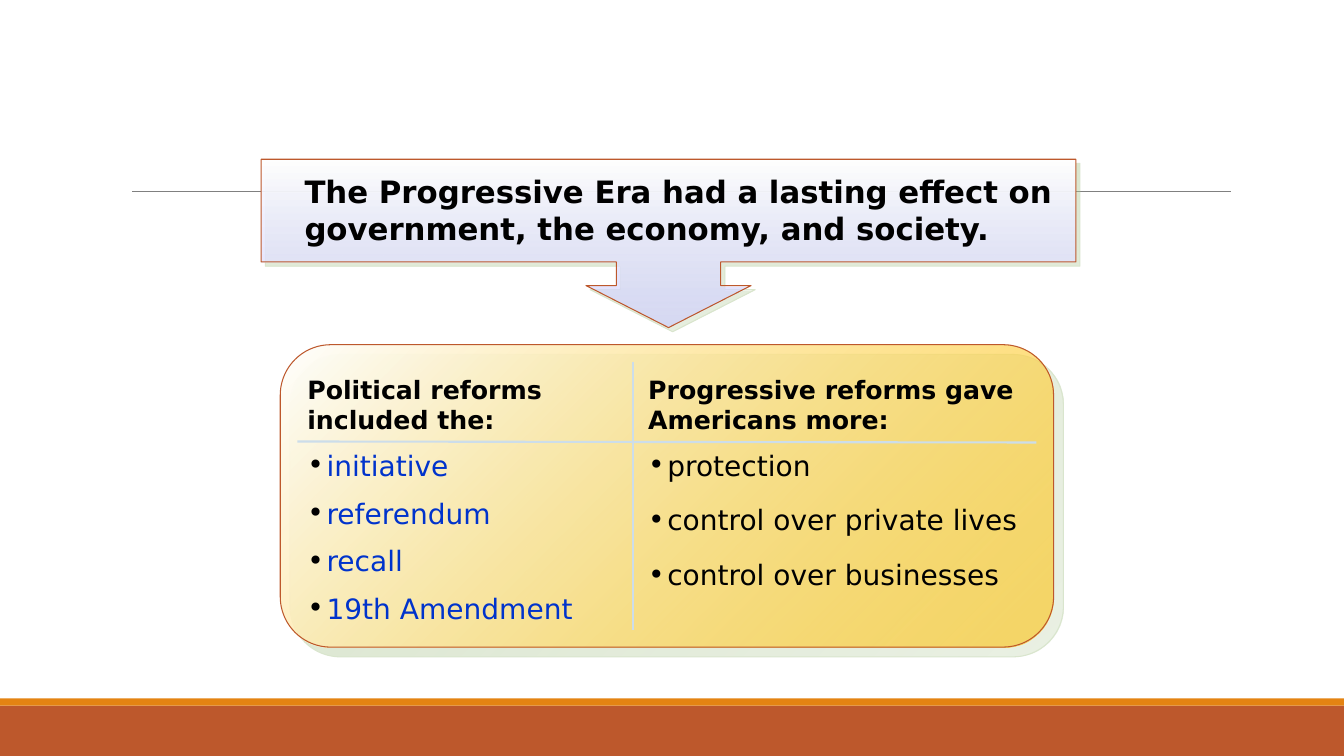
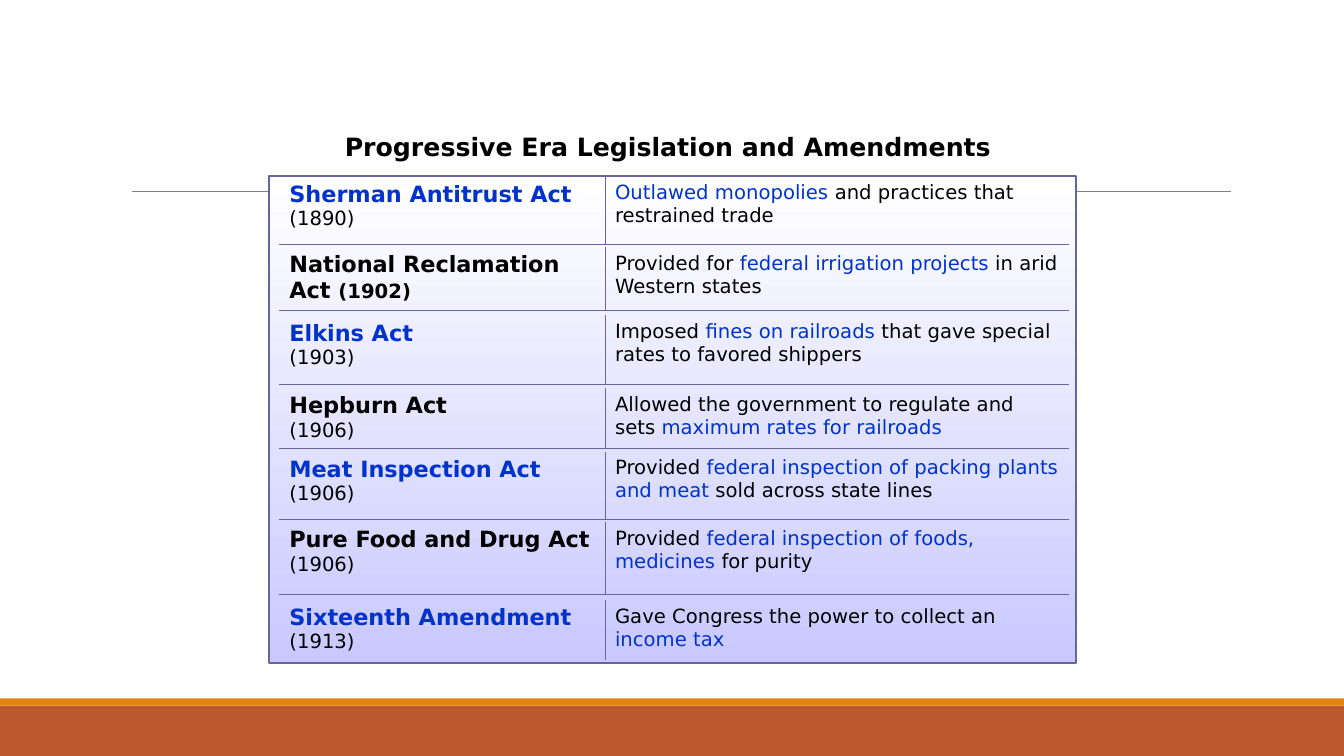
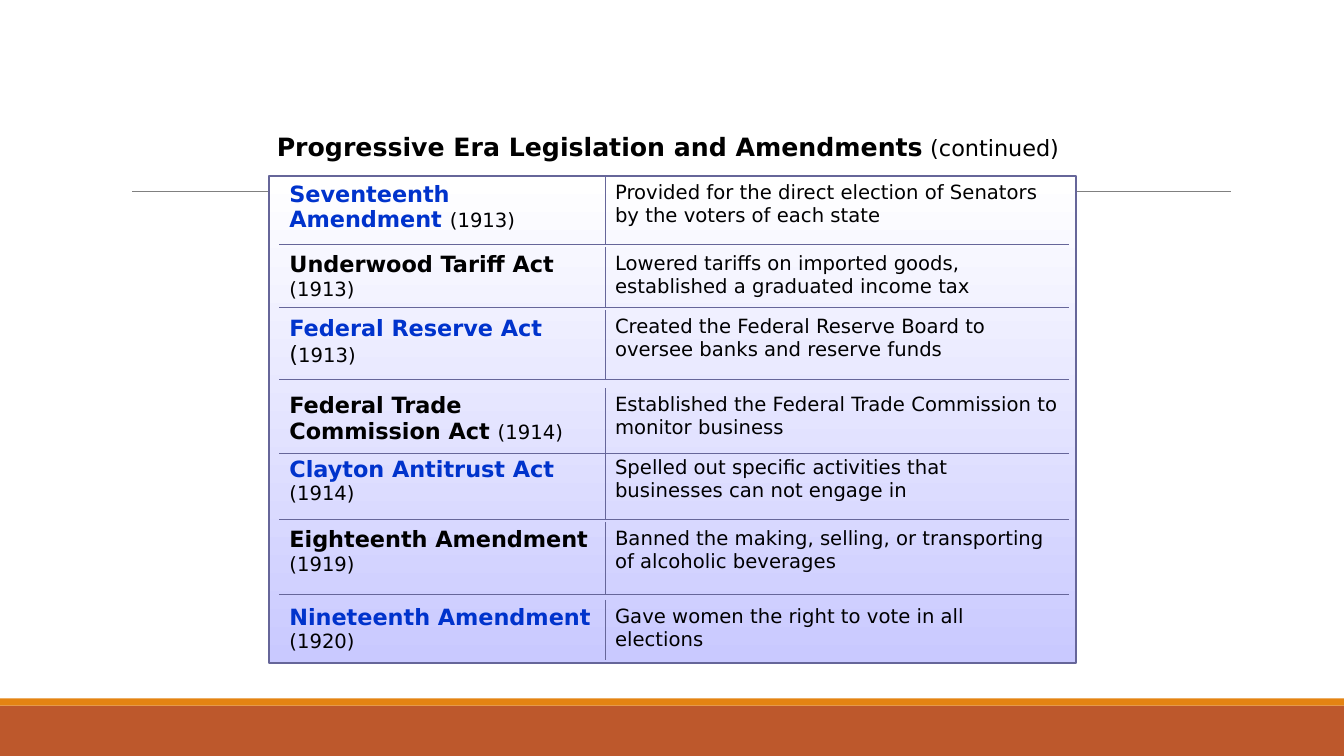
from dataclasses import dataclass

from lxml import etree
from pptx import Presentation
from pptx.dml.color import RGBColor
from pptx.enum import shapes, text
from pptx.oxml.ns import qn
from pptx.util import Inches, Pt

FONT = "DejaVu Sans"
WHITE = RGBColor(0xFF, 0xFF, 0xFF)
BLACK = RGBColor(0x00, 0x00, 0x00)
BLUE = RGBColor(0x00, 0x33, 0xCC)
GRAY = RGBColor(0x80, 0x80, 0x80)
RUST = RGBColor(0xBD, 0x58, 0x2C)
ORANGE = RGBColor(0xE4, 0x83, 0x12)
GOLD = RGBColor(0xFF, 0xC0, 0x00)
LILAC = RGBColor(0xCD, 0xCD, 0xFF)
LAVENDER = RGBColor(0xC9, 0xC9, 0xFF)
SLATE = RGBColor(0x66, 0x66, 0x99)
PALE_BLUE = RGBColor(0xCC, 0xDD, 0xEA)
SAGE = RGBColor(0xAD, 0xC7, 0x93)
PLAIN_TABLE = "{2D5ABB26-0587-4C30-8999-92F81FD0307C}"
SLIDE_WIDTH = 13.33
HEADING = "Progressive Era Legislation and Amendments"


@dataclass
class Act:
    top: float
    height: float
    name: str
    year: str
    effect: str
    year_bold: bool = False
    opening: str = ""


FIRST_ACTS = [
    Act(1.75, 0.67, "Sherman Antitrust Act ", "(1890)",
        "*Outlawed monopolies* and practices that restrained trade"),
    Act(2.45, 0.63, "National Reclamation Act ", "(1902)",
        "Provided for *federal irrigation projects* in arid Western states", year_bold=True),
    Act(3.13, 0.68, "Elkins Act\n", "(1903)",
        "Imposed *fines on railroads* that gave special rates to favored shippers"),
    Act(3.85, 0.6, "Hepburn Act\n", "(1906)",
        "Allowed the government to regulate and sets *maximum rates for railroads*"),
    Act(4.48, 0.67, "Meat Inspection Act ", "(1906)",
        "Provided *federal inspection of packing plants and meat* sold across state lines"),
    Act(5.18, 0.72, "Pure Food and Drug Act ", "(1906)",
        "Provided *federal inspection of foods, medicines* for purity"),
    Act(5.95, 0.6, "Sixteenth Amendment ", "(1913)",
        "Gave Congress the power to collect an *income tax*"),
]
LATER_ACTS = [
    Act(1.75, 0.67, "Seventeenth Amendment ", "(1913)",
        "Provided for the direct election of Senators by the voters of each state"),
    Act(2.45, 0.6, "Underwood Tariff Act\n", "(1913)",
        "Lowered tariffs on imported goods, established a graduated income tax"),
    Act(3.08, 0.68, "Federal Reserve Act\n", "1913)",
        "Created the Federal Reserve Board to oversee banks and reserve funds", opening="("),
    Act(3.85, 0.65, "Federal Trade Commission Act ", "(1914)",
        "Established the Federal Trade Commission to monitor business"),
    Act(4.48, 0.67, "Clayton Antitrust Act\n", "(1914)",
        "Spelled out specific activities that businesses can not engage in"),
    Act(5.18, 0.72, "Eighteenth Amendment ", "(1919)",
        "Banned the making, selling, or transporting of alcoholic beverages"),
    Act(5.95, 0.6, "Nineteenth Amendment ", "(1920)",
        "Gave women the right to vote in all elections"),
]


def style(font, size, color=BLACK, bold=False):
    font.name = FONT
    font.size = Pt(size)
    font.bold = bold
    font.color.rgb = color


def add_run(paragraph, words, size, color=BLACK, bold=False):
    run = paragraph.add_run()
    run.text = words
    style(run.font, size, color, bold)


def add_line(slide, start, end, color, width):
    rule = slide.shapes.add_connector(
        shapes.MSO_CONNECTOR.STRAIGHT, *(Inches(n) for n in start + end))
    rule.line.color.rgb = color
    rule.line.width = Pt(width)
    etree.SubElement(rule.element.spPr, qn("a:effectLst"))


def add_box(slide, preset, box, line_color=None, line_width=0.75):
    shape = slide.shapes.add_shape(preset, *(Inches(n) for n in box))
    shape.shadow.inherit = False
    if line_color is None:
        shape.line.fill.background()
    else:
        shape.line.color.rgb = line_color
        shape.line.width = Pt(line_width)
    return shape


def set_alpha(color_element, percent):
    etree.SubElement(color_element, qn("a:alpha"), val=str(percent * 1000))


def fill_gradient(shape, start, end, angle, start_alpha=100):
    shape.fill.gradient()
    shape.fill.gradient_angle = 360 - angle
    for stop, color, position in zip(shape.fill.gradient_stops, (start, end), (0, 1)):
        stop.color.rgb = color
        stop.position = position
    if start_alpha < 100:
        first_stop = next(shape.element.iter(qn("a:gs")))
        set_alpha(first_stop[0], start_alpha)


def cast_shadow(shape, distance):
    effects = shape.element.spPr.find(qn("a:effectLst"))
    shadow = etree.SubElement(
        effects, qn("a:outerShdw"), dist=str(Pt(distance)), dir=str(45 * 60000),
        algn="ctr", rotWithShape="0")
    set_alpha(etree.SubElement(shadow, qn("a:srgbClr"), val=str(SAGE)), 46)


def add_slide(prs):
    slide = prs.slides.add_slide(prs.slide_layouts[5])
    add_line(slide, (1.31, 1.9), (12.21, 1.9), GRAY, 0.5)
    for top, height, color in ((7, 0.5, RUST), (6.93, 0.07, ORANGE)):
        band = add_box(slide, shapes.MSO_SHAPE.RECTANGLE, (0, top, SLIDE_WIDTH, height))
        band.fill.solid()
        band.fill.fore_color.rgb = color
    return slide


def set_title(slide, box, runs, align):
    title = slide.shapes.title
    title.left, title.top, title.width, title.height = (Inches(n) for n in box)
    frame = title.text_frame
    frame.word_wrap = True
    frame.auto_size = text.MSO_AUTO_SIZE.NONE
    frame.vertical_anchor = text.MSO_ANCHOR.TOP
    paragraph = frame.paragraphs[0]
    paragraph.alignment = align
    for words, size, bold in runs:
        add_run(paragraph, words, size, bold=bold)
    return title


def add_bullet(paragraph):
    properties = paragraph._p.get_or_add_pPr()
    hang = Inches(0.19)
    properties.set("marL", str(hang))
    properties.set("indent", str(-hang))
    bullet_color = etree.SubElement(properties, qn("a:buClr"))
    etree.SubElement(bullet_color, qn("a:srgbClr"), val=str(BLACK))
    etree.SubElement(properties, qn("a:buFont"), typeface=FONT)
    etree.SubElement(properties, qn("a:buChar"), char="•")


def add_reforms(slide, box, heading, reforms, color, gap):
    frame = slide.shapes.add_textbox(*(Inches(n) for n in box)).text_frame
    frame.word_wrap = True
    lead = frame.paragraphs[0]
    lead.text = heading
    lead.space_after = Pt(10)
    style(lead.font, 18, bold=True)
    for reform in reforms:
        item = frame.add_paragraph()
        item.text = reform
        item.space_after = Pt(gap)
        add_bullet(item)
        style(item.font, 20, color)
        style(item.runs[0].font, 20, color)


def set_borders(cell, sides):
    properties = cell._tc.get_or_add_tcPr()
    for index, side in enumerate(sides):
        border = etree.Element(qn(f"a:ln{side}"), w=str(Pt(0.5)))
        fill = etree.SubElement(border, qn("a:solidFill"))
        etree.SubElement(fill, qn("a:srgbClr"), val=str(SLATE))
        properties.insert(index, border)


def add_act(slide, act, name_color, last):
    table = slide.shapes.add_table(
        1, 2, Inches(2.77), Inches(act.top), Inches(7.83), Inches(act.height)).table
    table.first_row = table.horz_banding = False
    table._tbl.tblPr.find(qn("a:tableStyleId")).text = PLAIN_TABLE
    for column, width in zip(table.columns, (3.23, 4.6)):
        column.width = Inches(width)
    for cell, inner_side in zip(table.rows[0].cells, "RL"):
        cell.fill.background()
        set_borders(cell, inner_side if last else inner_side + "B")

    name, effect = (cell.text_frame.paragraphs[0] for cell in table.rows[0].cells)
    add_run(name, act.name.rstrip("\n"), 16, name_color, True)
    if act.name.endswith("\n"):
        name.add_line_break()
    if act.opening:
        add_run(name, act.opening, 16)
    add_run(name, act.year, 14, bold=act.year_bold)
    for index, words in enumerate(act.effect.split("*")):
        if words:
            add_run(effect, words, 14, BLUE if index % 2 else BLACK)


def build_effects_slide(prs):
    slide = add_slide(prs)
    panel = add_box(slide, shapes.MSO_SHAPE.ROUNDED_RECTANGLE, (2.78, 3.42, 7.67, 3), RUST)
    fill_gradient(panel, GOLD, WHITE, 225, 55)
    cast_shadow(panel, 9.9)

    callout = add_box(slide, shapes.MSO_SHAPE.UP_ARROW_CALLOUT, (2.59, 1.58, 8.08, 1.67), RUST)
    callout.rotation = 180
    for index, value in enumerate((0.62, 0.49, 0.25, 0.61)):
        callout.adjustments[index] = value
    fill_gradient(callout, LILAC, WHITE, 90, 62)
    cast_shadow(callout, 4.2)

    title = set_title(
        slide, (2.92, 1.66, 7.67, 0.83),
        [("The Progressive Era had a lasting effect on government, the economy, and society.",
          22, True)],
        text.PP_ALIGN.LEFT)
    slide.shapes.element.append(title.element)

    add_reforms(slide, (6.33, 3.66, 4.08, 2.28), "Progressive reforms gave Americans more:",
                ["protection", "control over private lives", "control over businesses"],
                BLACK, 15)
    add_reforms(slide, (2.95, 3.66, 3.25, 2.61), "Political reforms included the:",
                ["initiative", "referendum", "recall", "19th Amendment"], BLUE, 10)
    add_line(slide, (2.95, 4.38), (10.28, 4.39), PALE_BLUE, 1.5)
    add_line(slide, (6.28, 3.59), (6.28, 6.25), PALE_BLUE, 1.5)


def build_acts_slide(prs, heading_runs, acts):
    slide = add_slide(prs)
    set_title(slide, (2.25, 1.25, 8.75, 0.4), heading_runs, text.PP_ALIGN.CENTER)
    panel = add_box(slide, shapes.MSO_SHAPE.RECTANGLE, (2.67, 1.75, 8, 4.83), SLATE, 1.5)
    fill_gradient(panel, WHITE, LAVENDER, 90)
    for index, act in enumerate(acts):
        add_act(slide, act, BLACK if index % 2 else BLUE, act is acts[-1])


def main():
    prs = Presentation()
    prs.slide_width = Inches(SLIDE_WIDTH)
    prs.slide_height = Inches(7.5)
    heading = (HEADING, 18, True)
    build_effects_slide(prs)
    build_acts_slide(prs, [heading], FIRST_ACTS)
    build_acts_slide(prs, [heading, (" (continued)", 16, False)], LATER_ACTS)
    prs.save("out.pptx")


if __name__ == "__main__":
    main()
